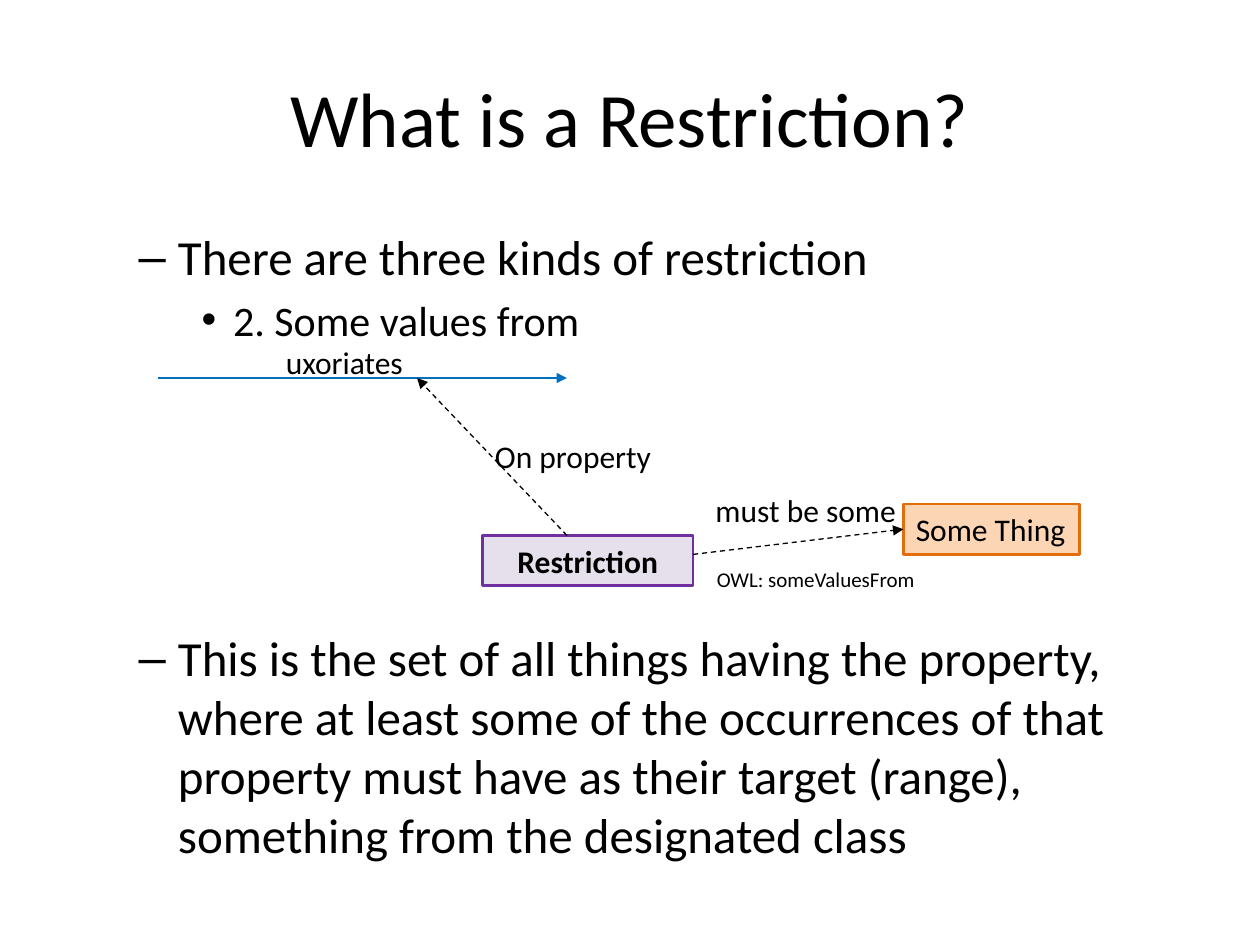
from pptx import Presentation
from pptx.dml.color import RGBColor
from pptx.enum.dml import MSO_LINE
from pptx.enum.shapes import MSO_CONNECTOR, MSO_SHAPE
from pptx.enum.text import MSO_AUTO_SIZE, PP_ALIGN
from pptx.oxml.ns import qn
from pptx.util import Pt
from lxml import etree

PX = 9144  # EMU per px, 100 px to the inch
RECT, STRAIGHT, DASH = MSO_SHAPE.RECTANGLE, MSO_CONNECTOR.STRAIGHT, MSO_LINE.DASH
LEFT, CENTER = PP_ALIGN.LEFT, PP_ALIGN.CENTER
FONT = "Calibri"
COLORS = {
    "text": "000000",
    "property": "0070C0",
    "restriction_fill": "E6E0EC",
    "restriction_line": "7030A0",
    "thing_fill": "FCD5B5",
    "thing_line": "E46C0A",
}


def rgb(name):
    return RGBColor.from_string(COLORS[name])


def write(sp, text, size, align=LEFT, bold=False, wrap=False):
    tf = sp.text_frame
    tf.text = text
    tf.word_wrap = wrap
    p = tf.paragraphs[0]
    p.alignment = align
    font = p.runs[0].font
    font.name, font.size, font.bold = FONT, Pt(size), bold
    font.color.rgb = rgb("text")


prs = Presentation()
prs.slide_width, prs.slide_height = 1000 * PX, 750 * PX
s = prs.slides.add_slide(prs.slide_layouts[1])

# Title
title, body = s.placeholders
title.left, title.top, title.width, title.height = (v * PX for v in (50, 30, 900, 125))
write(title, "What is a Restriction?", 44, CENTER, wrap=True)

# Body list, with a gap for the diagram before the last point
body.left, body.top, body.width, body.height = (v * PX for v in (50, 175, 900, 495))
tf = body.text_frame
tf.auto_size = MSO_AUTO_SIZE.NONE
points = [
    (1, 28, "There are three kinds of restriction"),
    (2, 24, "2. Some values from"),
    (1, 28, "This is the set of all things having the property, where at least some "
            "of the occurrences of that property must have as their target (range), "
            "something from the designated class"),
]
for i, (level, size, text) in enumerate(points):
    p = tf.paragraphs[0] if i == 0 else tf.add_paragraph()
    p.text, p.level = text, level
    font = p.runs[0].font
    font.name, font.size = FONT, Pt(size)
    font.color.rgb = rgb("text")
p.space_before = Pt(162)

# Class boxes
boxes = {}
for name, text, box, align, bold in [
    ("restriction", "Restriction", (383, 425, 167, 40), CENTER, True),
    ("thing", "Some Thing", (717, 400, 140, 40), LEFT, False),
]:
    sp = s.shapes.add_shape(RECT, *(v * PX for v in box))
    sp.shadow.inherit = False
    sp.fill.solid()
    sp.fill.fore_color.rgb = rgb(name + "_fill")
    sp.line.color.rgb = rgb(name + "_line")
    sp.line.width = Pt(1.5)
    write(sp, text, 18, align, bold)
    boxes[name] = sp

# Arrows
arrows = {}
for name, ends, color, width, dash in [
    ("must be", (550, 440, 717, 420), "text", 0.75, DASH),
    ("property", (125, 300, 450, 300), "property", 1.5, None),
    ("on property", (450, 425, 331, 300), "text", 0.75, DASH),
]:
    line = s.shapes.add_connector(STRAIGHT, *(v * PX for v in ends))
    line.line.color.rgb = rgb(color)
    line.line.width = Pt(width)
    line.line.dash_style = dash
    etree.SubElement(line.line._get_or_add_ln(), qn("a:tailEnd"), type="triangle")
    etree.SubElement(line._element.spPr, qn("a:effectLst"))
    arrows[name] = line
arrows["must be"].end_connect(boxes["thing"], 1)

# Labels
for text, size, box in [
    ("must be some", 18, (558, 385, 165, 40)),
    ("OWL: someValuesFrom", 12, (559, 445, 179, 30)),
    ("uxoriates", 18, (217, 267, 114, 40)),
    ("On property", 18, (383, 342, 145, 40)),
]:
    write(s.shapes.add_textbox(*(v * PX for v in box)), text, size)

prs.save("out.pptx")
